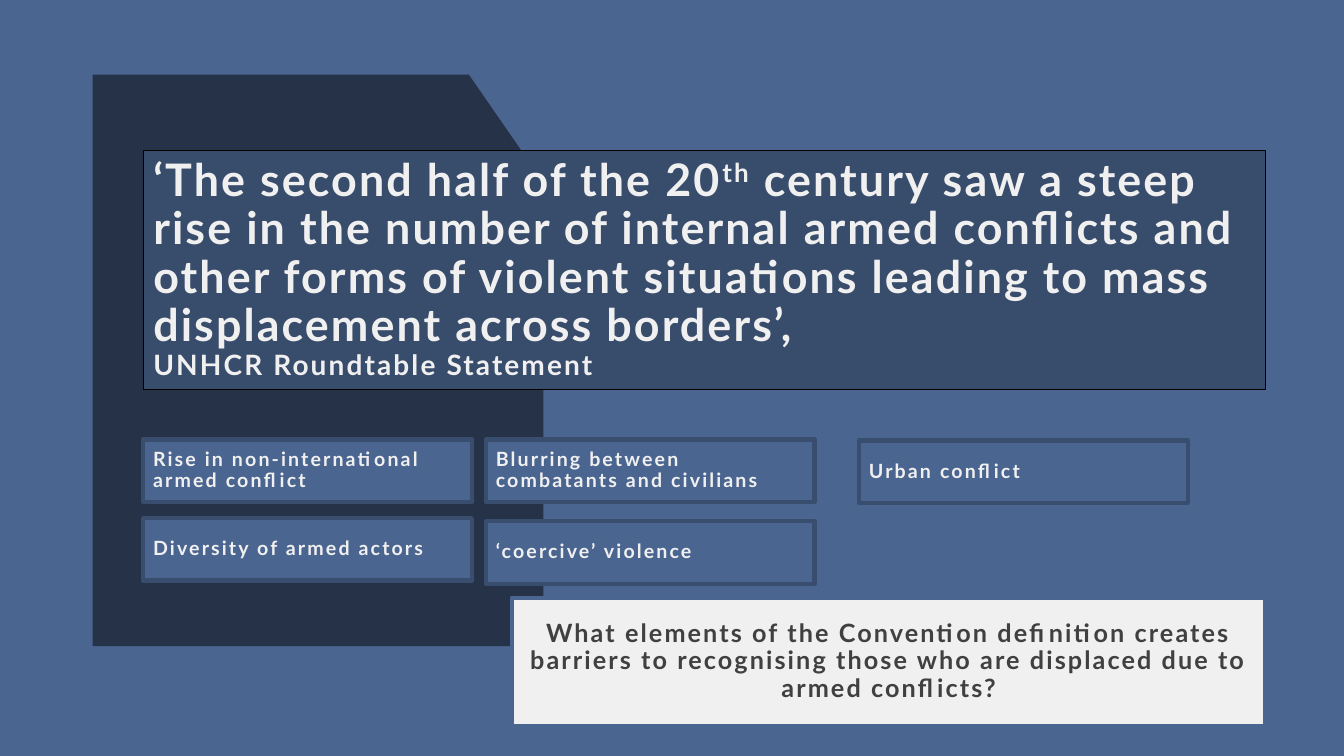
import pptx
import pptx.dml.color
import pptx.enum.shapes
import pptx.enum.text
import pptx.util

Inches = pptx.util.Inches
Pt = pptx.util.Pt
ALIGN = pptx.enum.text.PP_ALIGN

COLORS = {
    "background": "4A6590",
    "panel": "253248",
    "quote": "384C6C",
    "quote_border": "000000",
    "factor_border": "394D6E",
    "light": "F1F0F0",
    "dark": "404040",
}


def rgb(name):
    return pptx.dml.color.RGBColor.from_string(COLORS[name])


def paint(shape, fill, border, width):
    shape.fill.solid()
    shape.fill.fore_color.rgb = rgb(fill)
    shape.line.color.rgb = rgb(border)
    shape.line.width = Pt(width)


def style_paragraph(paragraph, size, color, align=ALIGN.LEFT):
    paragraph.alignment = align
    paragraph.line_spacing = 0.9
    font = paragraph.font
    font.name = "Lato"
    font.size = Pt(size)
    font.bold = True
    font.color.rgb = rgb(color)
    # Letter spacing of 1.5 pt
    paragraph._p.pPr.find(pptx.oxml.ns.qn("a:defRPr")).set("spc", "150")


def add_panel(slide, left, top, width, height):
    """Dark panel with its top right corner cut off."""
    right, bottom = left + width, top + height
    outline = slide.shapes.build_freeform(Inches(left), Inches(top))
    outline.add_line_segments([
        (Inches(x), Inches(y)) for x, y in (
            (right - 0.74, top), (right, top + 1.07),
            (right, bottom), (left, bottom))
    ])
    panel = outline.convert_to_shape()
    panel.shadow.inherit = False
    panel.fill.solid()
    panel.fill.fore_color.rgb = rgb("panel")
    panel.line.fill.background()


def add_quote(slide, left, top, width, height):
    """Title with the quotation and its source."""
    title = slide.shapes.title
    slide.shapes._spTree.append(title._element)  # bring in front of the panel
    title.left, title.top = Inches(left), Inches(top)
    title.width, title.height = Inches(width), Inches(height)
    paint(title, "quote", "quote_border", 0.75)
    frame = title.text_frame
    frame.word_wrap = True
    frame.auto_size = pptx.enum.text.MSO_AUTO_SIZE.NONE
    frame.vertical_anchor = pptx.enum.text.MSO_ANCHOR.MIDDLE

    paragraph = frame.paragraphs[0]
    style_paragraph(paragraph, 32, "light")
    paragraph.add_run().text = "‘The second half of the 20"
    ordinal = paragraph.add_run()
    ordinal.text = "th"
    ordinal.font._element.set("baseline", "30000")
    paragraph.add_run().text = (
        " century saw a steep rise in the number of internal armed conflicts "
        "and other forms of violent situations leading to mass displacement "
        "across borders’, ")
    paragraph.add_line_break()
    source = paragraph.add_run()
    source.text = "UNHCR Roundtable Statement"
    source.font.size = Pt(20)


def add_box(slide, box, text, fill, border, size, color, align=ALIGN.LEFT):
    """Bordered rectangle with one vertically centred paragraph."""
    shape = slide.shapes.add_shape(
        pptx.enum.shapes.MSO_SHAPE.RECTANGLE, *map(Inches, box))
    shape.shadow.inherit = False
    paint(shape, fill, border, 3)
    frame = shape.text_frame
    frame.word_wrap = True
    frame.vertical_anchor = pptx.enum.text.MSO_ANCHOR.MIDDLE
    paragraph = frame.paragraphs[0]
    paragraph.text = text
    style_paragraph(paragraph, size, color, align)
    paragraph.space_before = Pt(10)


def add_factors(slide, width, height):
    """Boxes naming the features of modern conflict."""
    factors = (
        (4.82, 4.36, "Blurring between combatants and civilians"),
        (4.82, 5.17, "‘coercive’ violence"),
        (1.42, 4.36, "Rise in non-international armed conflict"),
        (1.42, 5.14, "Diversity of armed actors"),
        (8.52, 4.37, "Urban conflict"),
    )
    for left, top, factor in factors:
        add_box(slide, (left, top, width, height), factor,
                "background", "factor_border", 14, "light")


def add_question(slide, left, top, width, height):
    """Closing question for discussion."""
    add_box(slide, (left, top, width, height),
            "What elements of the Convention definition creates barriers to "
            "recognising those who are displaced due to armed conflicts?",
            "light", "background", 18, "dark", ALIGN.CENTER)


def main():
    deck = pptx.Presentation()
    deck.slide_width, deck.slide_height = Inches(13.33), Inches(7.5)
    slide = deck.slides.add_slide(deck.slide_layouts.get_by_name("Title Only"))
    slide.background.fill.solid()
    slide.background.fill.fore_color.rgb = rgb("background")

    add_panel(slide, 0.92, 0.74, 4.47, 5.67)
    add_quote(slide, 1.42, 1.49, 11.13, 2.37)
    add_factors(slide, 3.26, 0.62)
    add_question(slide, 5.08, 5.93, 7.47, 1.27)
    deck.save("out.pptx")


if __name__ == "__main__":
    main()
